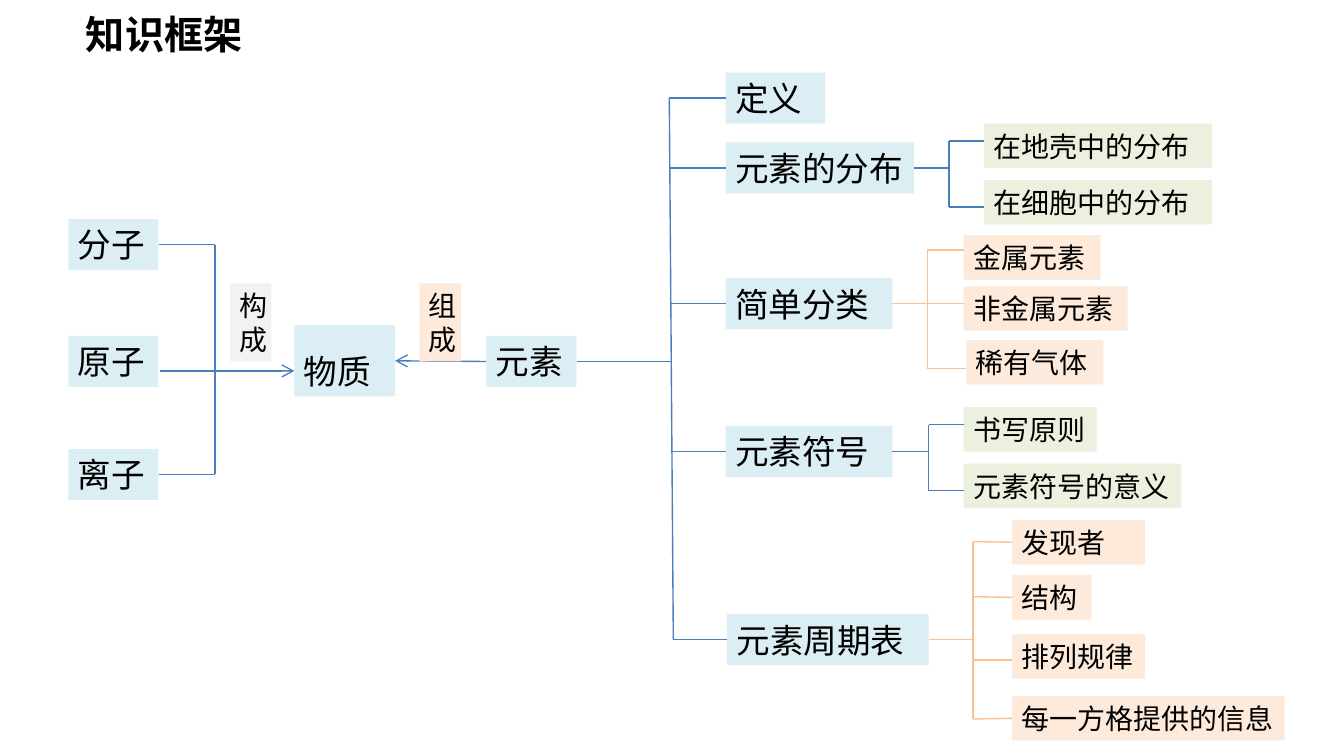
"""Build a concept-map slide about chemical elements."""
from lxml.etree import SubElement
from pptx import Presentation
from pptx.dml.color import RGBColor
from pptx.enum.shapes import MSO_CONNECTOR, MSO_SHAPE
from pptx.enum.text import MSO_ANCHOR, MSO_AUTO_SIZE, PP_ALIGN
from pptx.oxml.ns import qn
from pptx.util import Pt

PX = 9144
FONT = "Noto Sans CJK SC"
AQUA, GREEN, PEACH, GREY = "DBEEF4", "EBF1DE", "FDEADA", "F2F2F2"
BLUE, ORANGE = "4B7EBC", "FAC090"
LEFT, RIGHT = 1, 3
TOPIC_HEIGHT, DETAIL_HEIGHT = 38, 33

PARTICLES = [("分子", 163), ("原子", 250), ("离子", 334)]
PARTICLE_LEFT, PARTICLE_WIDTH, PARTICLE_SPINE, PARTICLE_ARROW_Y = 51, 67, 160, 276
VERBS = [("构成", 171, GREY), ("组成", 312, PEACH)]
TRUNK_TOP_X, TRUNK_BOTTOM_X = 498, 501

# topic, left, top, width, detail fill, line colour, spine x, details
# detail: text, left, top, width, line y
TOPICS = [
    ("定义", 540, 54, 74, None, None, None, []),
    ("元素的分布", 540, 106, 140, GREEN, BLUE, 706, [
        ("在地壳中的分布", 732, 92, 170, 105),
        ("在细胞中的分布", 732, 134, 170, 154)]),
    ("简单分类", 540, 207, 124, PEACH, ORANGE, 690, [
        ("金属元素", 717, 175, 102, 186),
        ("非金属元素", 717, 213, 122, 226),
        ("稀有气体", 719, 253, 102, 274)]),
    ("元素符号", 540, 317, 124, GREEN, BLUE, 691, [
        ("书写原则", 717, 303, 99, 316),
        ("元素符号的意义", 717, 345, 162, 365)]),
    ("元素周期表", 541, 457, 150, PEACH, ORANGE, 724, [
        ("发现者", 753, 387, 99, 403),
        ("结构", 753, 428, 59, 444),
        ("排列规律", 753, 472, 99, 491),
        ("每一方格提供的信息", 753, 518, 203, 535)]),
]

prs = Presentation()
prs.slide_width = 1000 * PX
prs.slide_height = prs.slide_width * 9 // 16
slide = prs.slides.add_slide(prs.slide_layouts[6])


def color(value):
    return RGBColor.from_string(value)


def write(holder, text, size=18, bold=False, spacing=None, wrap=True, side=7):
    frame = holder.text_frame
    frame.word_wrap = wrap
    frame.auto_size = MSO_AUTO_SIZE.SHAPE_TO_FIT_TEXT
    frame.vertical_anchor = MSO_ANCHOR.TOP
    frame.margin_left = frame.margin_right = side * PX
    frame.margin_top = frame.margin_bottom = 4 * PX
    paragraph = frame.paragraphs[0]
    paragraph.alignment = PP_ALIGN.LEFT
    paragraph.line_spacing = spacing
    run = paragraph.add_run()
    run.text = text
    run.font.name, run.font.size, run.font.bold = FONT, Pt(size), bold
    run.font.color.rgb = color("000000")
    SubElement(run.font._element, qn("a:ea"), typeface=FONT)


def box(text, left, top, width, height=TOPIC_HEIGHT, fill=AQUA, **style):
    rect = slide.shapes.add_shape(
        MSO_SHAPE.RECTANGLE, left * PX, top * PX, width * PX, height * PX)
    rect.shadow.inherit = False
    rect.fill.solid()
    rect.fill.fore_color.rgb = color(fill)
    rect.line.fill.background()
    write(rect, text, **style)
    return rect


def line(x1, y1, x2, y2, stroke=BLUE, arrow=False, begin=None, end=None):
    link = slide.shapes.add_connector(
        MSO_CONNECTOR.STRAIGHT, *(round(v * PX) for v in (x1, y1, x2, y2)))
    if begin:
        link.begin_connect(*begin)
    if end:
        link.end_connect(*end)
    link.line.color.rgb = color(stroke)
    link.line.width = Pt(0.75)
    if arrow:
        SubElement(link.line._get_or_add_ln(), qn("a:tailEnd"), type="arrow")
    SubElement(link._element.spPr, qn("a:effectLst"))


def draw_causes():
    for text, top in PARTICLES:
        particle = box(text, PARTICLE_LEFT, top, PARTICLE_WIDTH)
        if text != "原子":
            y = top + TOPIC_HEIGHT / 2
            line(118, y, PARTICLE_SPINE, y, begin=(particle, RIGHT))
    ends = [top + TOPIC_HEIGHT / 2 for _, top in PARTICLES]
    line(PARTICLE_SPINE, ends[0], PARTICLE_SPINE, ends[-1])
    matter = box("物质", 219, 242, 75, 53, spacing=1.5)
    line(119, PARTICLE_ARROW_Y, 219, PARTICLE_ARROW_Y, arrow=True)
    element = box("元素", 362, 250, 67)
    line(362, 269, 294, 269, arrow=True, begin=(element, LEFT), end=(matter, RIGHT))
    for text, left, fill in VERBS:
        box(text, left, 211, 31, 58, fill, size=15)
    return element


def draw_topics(element):
    middles = [topic[2] + TOPIC_HEIGHT / 2 for topic in TOPICS]
    top, bottom = middles[0], middles[-1]

    def trunk_x(y):
        return TRUNK_TOP_X + (TRUNK_BOTTOM_X - TRUNK_TOP_X) * (y - top) / (bottom - top)

    line(TRUNK_TOP_X, top, TRUNK_BOTTOM_X, bottom)
    line(429, 269, trunk_x(269), 269, begin=(element, RIGHT))
    for (text, left, y, width, fill, stroke, spine, details), middle in zip(TOPICS, middles):
        topic = box(text, left, y, width)
        line(trunk_x(middle), middle, left, middle, end=(topic, LEFT))
        if details:
            line(left + width, middle, spine, middle, stroke, begin=(topic, RIGHT))
            line(spine, details[0][-1], spine, details[-1][-1], stroke)
        for label, x, detail_top, detail_width, line_y in details:
            detail = box(label, x, detail_top, detail_width, DETAIL_HEIGHT, fill, size=15)
            centred = abs(detail_top + DETAIL_HEIGHT / 2 - line_y) < 1
            line(spine, line_y, x, line_y, stroke, end=(detail, LEFT) if centred else None)


title = slide.shapes.add_textbox(60 * PX, 4 * PX, 126 * PX, 43 * PX)
write(title, "知识框架", size=21, bold=True, wrap=False, side=4)
draw_topics(draw_causes())
prs.save("out.pptx")
